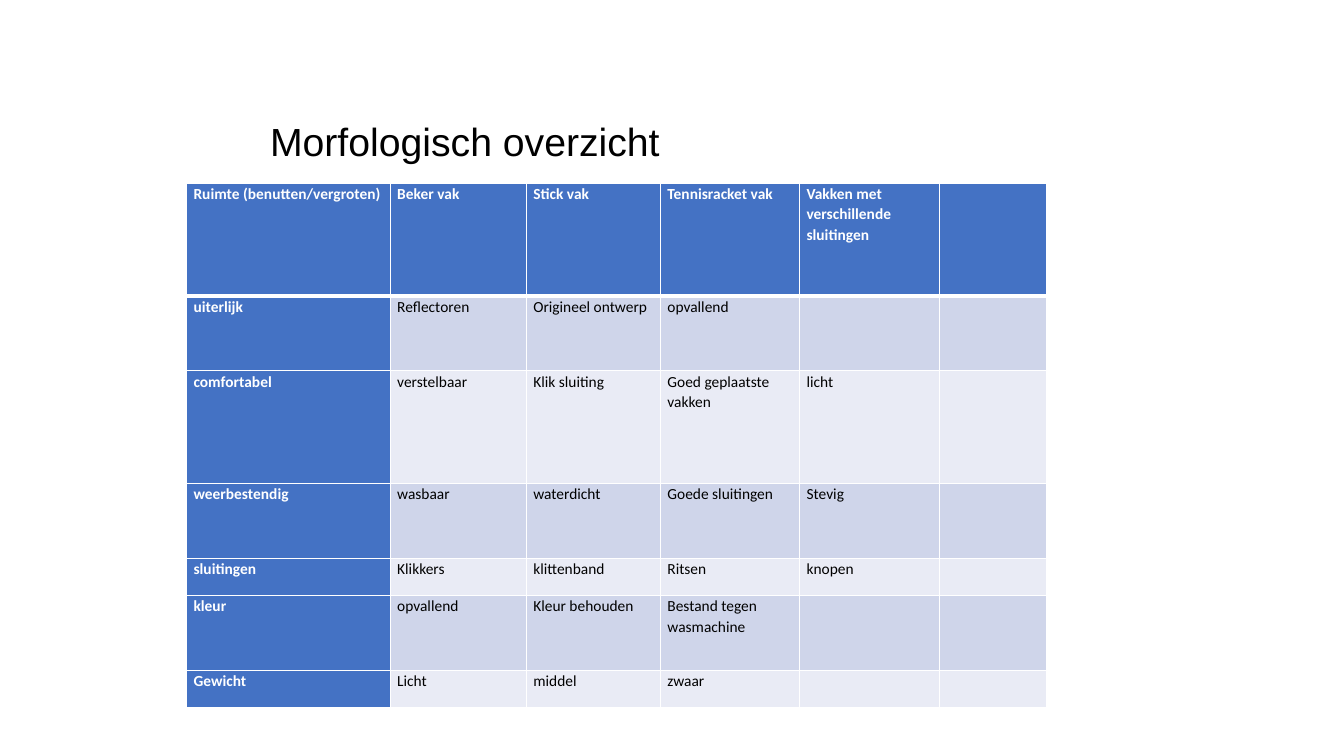
from lxml import etree
from pptx import Presentation
from pptx.dml.color import RGBColor
from pptx.enum.text import MSO_ANCHOR, MSO_AUTO_SIZE
from pptx.oxml.ns import qn
from pptx.util import Inches, Pt

MIDDLE = MSO_ANCHOR.MIDDLE
GROW = MSO_AUTO_SIZE.SHAPE_TO_FIT_TEXT

WHITE, BLACK = "FFFFFF", "000000"
HEADER_BLUE = "4472C4"
BANDS = ["E9EBF5", "CFD5EA"]

COLUMN_WIDTHS = [2.02, 1.35, 1.33, 1.38, 1.39, 1.06]
ROW_HEIGHTS = [1.12, 0.74, 1.12, 0.74, 0.37, 0.74, 0.37]
OVERVIEW = [
    ["Ruimte (benutten/vergroten)", "Beker vak", "Stick vak", "Tennisracket vak",
     "Vakken met verschillende sluitingen", ""],
    ["uiterlijk", "Reflectoren", "Origineel ontwerp", "opvallend", "", ""],
    ["comfortabel", "verstelbaar", "Klik sluiting", "Goed geplaatste vakken", "licht", ""],
    ["weerbestendig", "wasbaar", "waterdicht", "Goede sluitingen", "Stevig", ""],
    ["sluitingen", "Klikkers", "klittenband", "Ritsen", "knopen", ""],
    ["kleur", "opvallend", "Kleur behouden", "Bestand tegen wasmachine", "", ""],
    ["Gewicht", "Licht", "middel", "zwaar", "", ""],
]


def color(hex_string):
    return RGBColor.from_string(hex_string)


def write_text(text_frame, text, font, size, hex_color, bold=False, line_spacing=None):
    paragraph = text_frame.paragraphs[0]
    paragraph.line_spacing = line_spacing
    if not text:
        return
    run = paragraph.add_run()
    run.text = text
    run.font.name = font
    run.font.size = Pt(size)
    run.font.bold = bold
    run.font.color.rgb = color(hex_color)


def set_borders(cell, hex_color, top, bottom):
    """Draw solid cell borders; they must precede the fill in the XML."""
    properties = cell._tc.get_or_add_tcPr()
    sides = [("a:lnL", 1), ("a:lnR", 1), ("a:lnT", top), ("a:lnB", bottom)]
    for index, (tag, width) in enumerate(sides):
        line = etree.Element(qn(tag), w=str(Pt(width)))
        fill = etree.SubElement(line, qn("a:solidFill"))
        etree.SubElement(fill, qn("a:srgbClr"), val=hex_color)
        properties.insert(index, line)


def add_title(slide, left, top, width, height):
    box = slide.shapes.add_textbox(Inches(left), Inches(top), Inches(width), Inches(height))
    text_frame = box.text_frame
    text_frame.word_wrap = True
    text_frame.auto_size = GROW
    text_frame.vertical_anchor = MIDDLE
    write_text(text_frame, "Morfologisch overzicht", font="Arial", size=28, hex_color=BLACK)


def add_overview_table(slide, left, top, width, height):
    table = slide.shapes.add_table(
        len(ROW_HEIGHTS), len(COLUMN_WIDTHS),
        Inches(left), Inches(top), Inches(width), Inches(height)).table
    table.first_col = True
    for column, column_width in zip(table.columns, COLUMN_WIDTHS):
        column.width = Inches(column_width)
    for row, row_height in zip(table.rows, ROW_HEIGHTS):
        row.height = Inches(row_height)

    for row_index, texts in enumerate(OVERVIEW):
        for column_index, text in enumerate(texts):
            cell = table.cell(row_index, column_index)
            heading = row_index == 0 or column_index == 0
            cell.margin_left = cell.margin_right = Inches(0.07)
            cell.margin_top = cell.margin_bottom = 0
            cell.fill.solid()
            cell.fill.fore_color.rgb = color(HEADER_BLUE if heading else BANDS[row_index % 2])
            # A thick rule separates the header row from the body
            set_borders(cell, WHITE, top=3 if row_index == 1 else 1,
                        bottom=3 if row_index == 0 else 1)
            write_text(cell.text_frame, text, font="Calibri", size=11, bold=heading,
                       hex_color=WHITE if heading else BLACK, line_spacing=1.07)


def main():
    presentation = Presentation()
    presentation.slide_width = Inches(13.33)
    presentation.slide_height = Inches(7.5)
    slide = presentation.slides.add_slide(presentation.slide_layouts[6])
    add_overview_table(slide, 1.85, 1.82, sum(COLUMN_WIDTHS), sum(ROW_HEIGHTS))
    add_title(slide, 2.58, 1.11, 13.74, 0.57)
    presentation.save("out.pptx")


if __name__ == "__main__":
    main()
